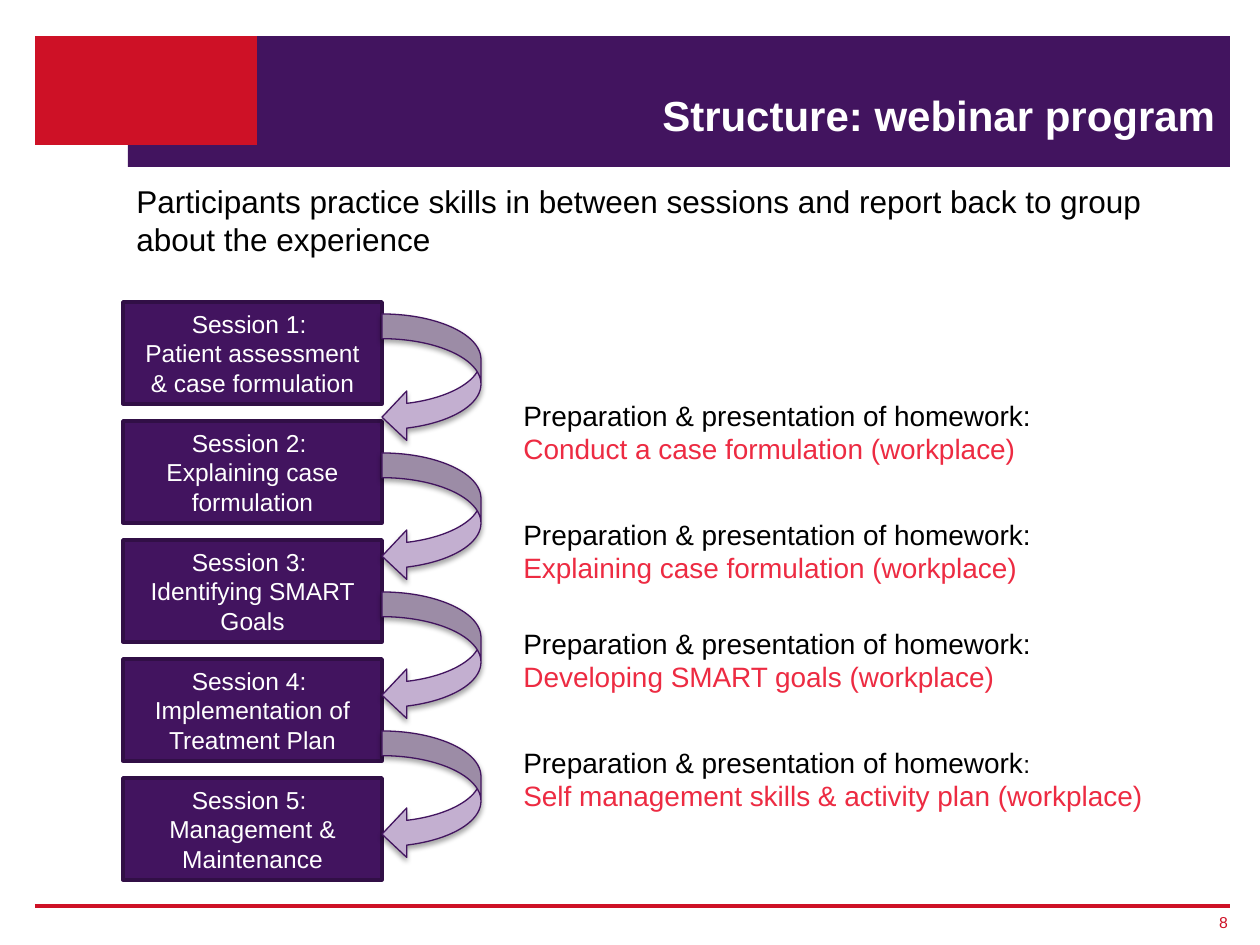
"""Build the slide that outlines the structure of the webinar program."""
import pptx
import pptx.dml.color
import pptx.enum.shapes
import pptx.enum.text
import pptx.oxml
import pptx.oxml.ns
import pptx.util

RGBColor = pptx.dml.color.RGBColor
ALIGN = pptx.enum.text.PP_ALIGN
ANCHOR = pptx.enum.text.MSO_ANCHOR
SHAPE = pptx.enum.shapes.MSO_SHAPE

EMU_PER_PX = 914400 / 126
FONT = "Arial"
PURPLE = RGBColor(0x42, 0x14, 0x5F)
DARK_PURPLE = RGBColor(0x31, 0x0F, 0x46)
LILAC = RGBColor(0xC3, 0xAF, 0xD0)
RED = RGBColor(0xCE, 0x11, 0x26)
ROSE = RGBColor(0xED, 0x2B, 0x42)
WHITE = RGBColor(0xFF, 0xFF, 0xFF)
BLACK = RGBColor(0, 0, 0)

SESSIONS = [
    "Patient assessment & case formulation",
    "Explaining case formulation",
    "Identifying SMART Goals",
    "Implementation of Treatment Plan",
    "Management & Maintenance",
]
HOMEWORK_LEAD = "Preparation & presentation of homework"
HOMEWORK = [
    (392, 586, 16, "Conduct a case formulation (workplace)"),
    (511, 576, 16, "Explaining case formulation (workplace)"),
    (620, 576, 16, "Developing SMART goals (workplace)"),
    (739, 655, 14, "Self management skills & activity plan (workplace)"),
]
SHADOW = (
    f'<a:effectLst {pptx.oxml.ns.nsdecls("a")}>'
    '<a:outerShdw blurRad="39370" dist="22860" dir="5400000" rotWithShape="0">'
    '<a:srgbClr val="000000"><a:alpha val="35000"/></a:srgbClr>'
    '</a:outerShdw></a:effectLst>'
)


def px(*lengths):
    """Turn pixel lengths into EMU."""
    return [pptx.util.Emu(round(length * EMU_PER_PX)) for length in lengths]


def write(frame, paragraphs, size=16, color=BLACK, bold=False, align=ALIGN.LEFT,
          anchor=ANCHOR.TOP, spacing=None, inset=None):
    """Fill a frame with paragraphs, each a list of (text, run format) pairs."""
    frame.word_wrap = True
    frame.auto_size = pptx.enum.text.MSO_AUTO_SIZE.NONE
    frame.vertical_anchor = anchor
    if inset is not None:
        frame.margin_left = frame.margin_right = inset
        frame.margin_top = frame.margin_bottom = inset
    for index, runs in enumerate(paragraphs):
        paragraph = frame.add_paragraph() if index else frame.paragraphs[0]
        paragraph.alignment = align
        if spacing:
            paragraph.line_spacing = pptx.util.Pt(spacing)
        for text, own in runs:
            run = paragraph.add_run()
            run.text = text
            run.font.name = FONT
            run.font.size = pptx.util.Pt(own.get("size", size))
            run.font.bold = bold
            run.font.color.rgb = own.get("color", color)


def add_text(slide, box, paragraphs, **text_format):
    """Add a text box holding the paragraphs."""
    write(slide.shapes.add_textbox(*px(*box)).text_frame, paragraphs, **text_format)


def add_block(slide, kind, box, fill, line=None, width=1):
    """Add a flat preset shape, outlined only if a line colour is given."""
    block = slide.shapes.add_shape(kind, *px(*box))
    block.shadow.inherit = False
    block.fill.solid()
    block.fill.fore_color.rgb = fill
    if line is None:
        block.line.fill.background()
    else:
        block.line.color.rgb = line
        block.line.width = pptx.util.Pt(width)
    return block


def add_rule(slide, left, right, y):
    """Add the red rule above the page number."""
    rule = slide.shapes.add_connector(
        pptx.enum.shapes.MSO_CONNECTOR.STRAIGHT, *px(left, y, right, y))
    rule.line.color.rgb = RED
    rule.line.width = pptx.util.Pt(2.25)
    rule.element.spPr.append(
        pptx.oxml.parse_xml(f'<a:effectLst {pptx.oxml.ns.nsdecls("a")}/>'))


def add_title(slide, box, text):
    """Place the title in front of the banner and format it."""
    title = slide.shapes.title
    title.left, title.top, title.width, title.height = px(*box)
    title.element.getparent().append(title.element)
    write(title.text_frame, [[(text, {})]], size=24, color=WHITE, bold=True,
          align=ALIGN.RIGHT, anchor=ANCHOR.BOTTOM, spacing=25)


def add_session(slide, number, topic):
    """Add one session box to the column."""
    box = (123, 302 + 119 * (number - 1), 259, 102)
    session = add_block(slide, SHAPE.RECTANGLE, box, PURPLE, DARK_PURPLE, 2)
    write(session.text_frame, [[(f"Session {number}: ", {})], [(topic, {})]],
          size=14, color=WHITE, align=ALIGN.CENTER, anchor=ANCHOR.MIDDLE)


def add_homework(slide, top, width, colon_size, task):
    """Add the homework lead and its task."""
    lead = [(HOMEWORK_LEAD, {}), (":", {"size": colon_size})]
    add_text(slide, (511, top, width, 80), [lead, [(task, {"color": ROSE})]])


def add_loop(slide, index):
    """Add one shadowed arrow that curves on to the next session."""
    loop = add_block(slide, SHAPE.CURVED_LEFT_ARROW,
                     (382, 314 + 139 * index, 99, 128), LILAC, PURPLE, 0.75)
    properties = loop.element.spPr
    properties.replace(properties.find(pptx.oxml.ns.qn("a:effectLst")),
                       pptx.oxml.parse_xml(SHADOW))


def main():
    """Build and save the slide."""
    deck = pptx.Presentation()
    deck.slide_width, deck.slide_height = px(1260, 945)
    slide = deck.slides.add_slide(deck.slide_layouts[5])

    add_block(slide, SHAPE.RECTANGLE, (128, 36, 1102, 131), PURPLE)
    add_rule(slide, 35, 1230, 906)
    add_block(slide, SHAPE.RECTANGLE, (35, 36, 222, 109), RED)
    add_title(slide, (258, 59, 970, 87), "Structure: webinar program")
    add_text(slide, (1194, 908, 34, 29), [[("8", {})]], size=9, color=RED,
             align=ALIGN.RIGHT, anchor=ANCHOR.MIDDLE, inset=0)

    for number, topic in enumerate(SESSIONS, 1):
        add_session(slide, number, topic)
    for homework in HOMEWORK:
        add_homework(slide, *homework)
    for index in range(len(SESSIONS) - 1):
        add_loop(slide, index)
    add_text(slide, (124, 176, 1101, 89),
             [[("Participants practice skills in between sessions and report "
                "back to group about the experience", {})]], size=18)

    deck.save("out.pptx")


if __name__ == "__main__":
    main()
